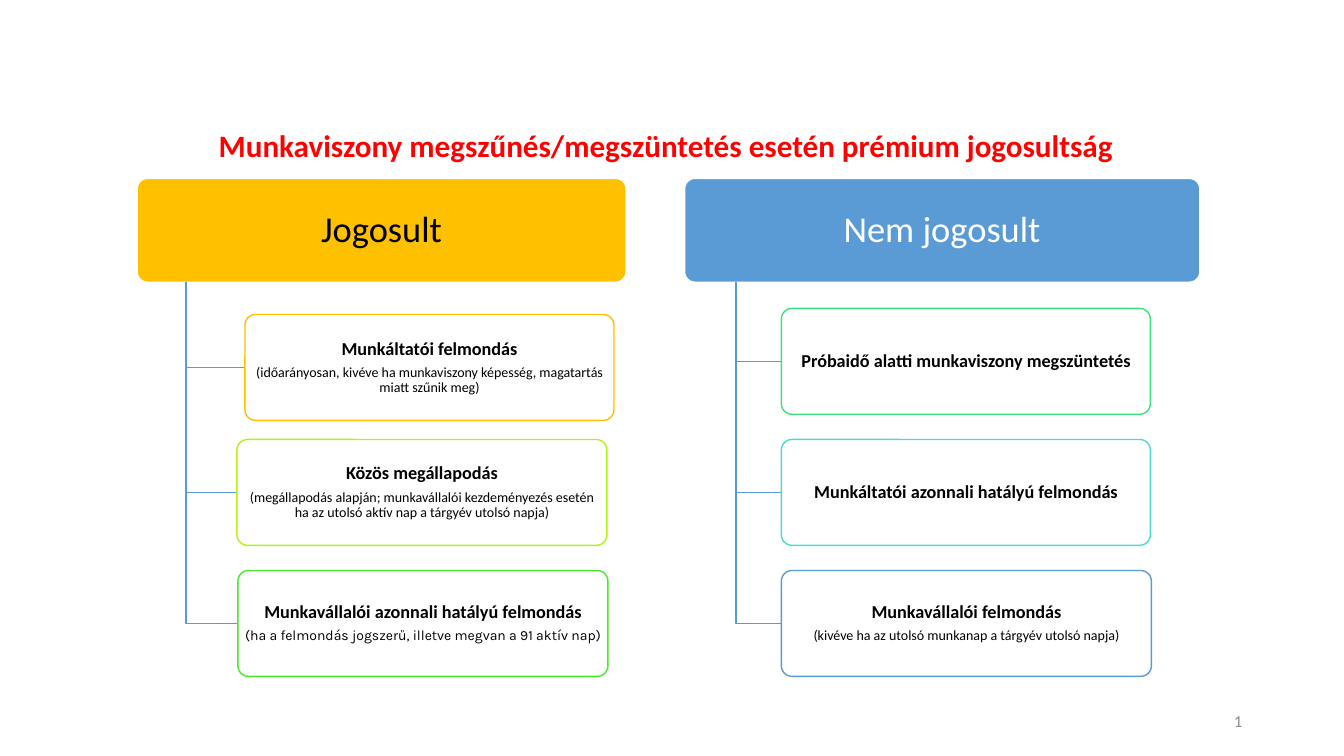
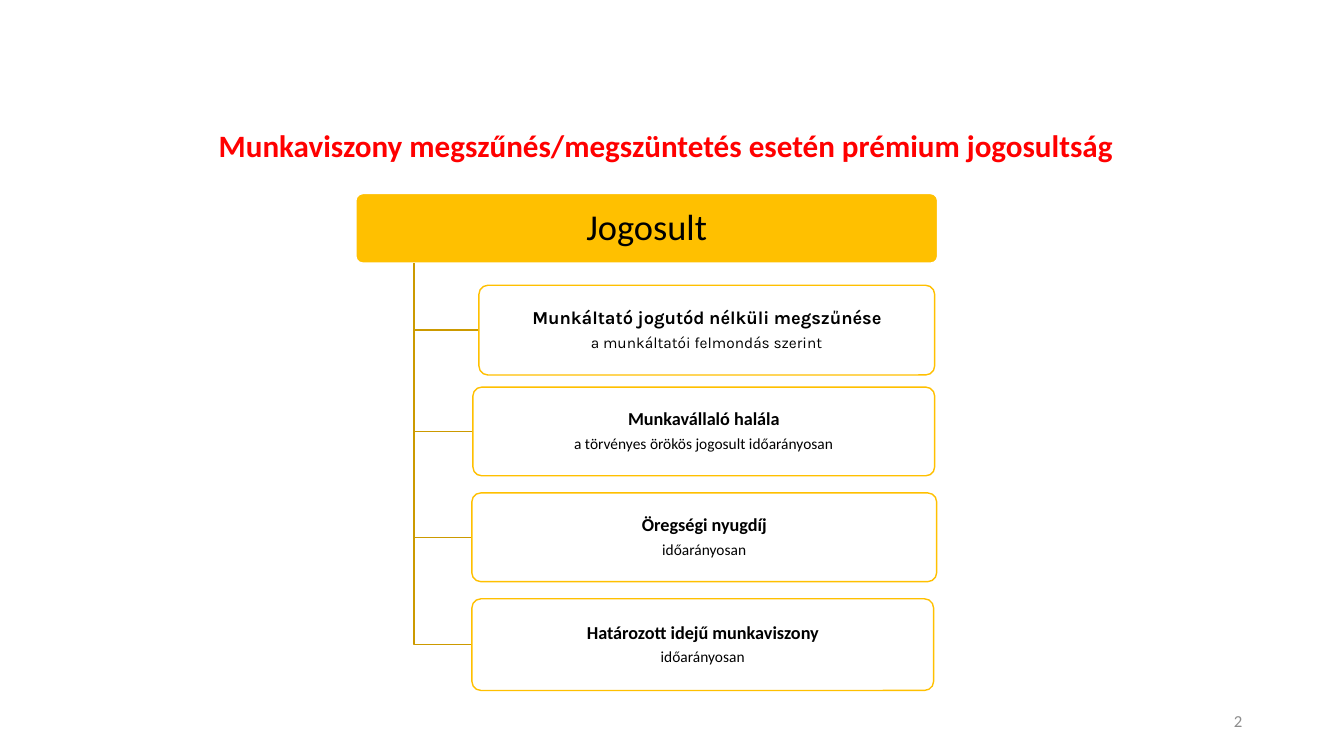
from dataclasses import dataclass

from lxml import etree
from pptx import Presentation
from pptx.dml import color
from pptx.enum import shapes, text
from pptx.oxml import ns
from pptx.util import Inches, Pt


@dataclass(frozen=True)
class Theme:
    font: str = "Calibri"
    accent_font: str = "Karla"
    title: str = "FF0000"
    number: str = "8C8C8C"
    ink: str = "000000"
    paper: str = "FFFFFF"
    gold: str = "FFC000"
    dark_gold: str = "CC9A00"
    blue: str = "5B9BD5"
    lime: str = "B2F514"
    green: str = "46EC27"
    mint: str = "39E37B"
    aqua: str = "4ADCD2"
    title_size: float = 22.2
    header_size: float = 26
    item_size: float = 13
    number_size: float = 12
    line_width: float = 1
    corner: float = 0.1
    trunk: float = 0.1  # trunk position as a share of the header width
    item_opacity: int = 90


T = Theme()


@dataclass
class Item:
    """A branch box, with its place given from the tree's top left corner."""
    dx: float
    dy: float
    w: float
    h: float
    border: str
    head: str
    note: str = ""
    head_font: str = T.font
    note_font: str = T.font


@dataclass
class Tree:
    box: tuple  # header box: left, top, width, height
    header: str
    fill: str
    ink: str
    line: str
    note_size: float
    items: list


def rgb(value):
    return color.RGBColor.from_string(value)


def write(p, words, size, ink, font=T.font, bold=False):
    p.text = words
    for r in p.runs:
        r.font.name, r.font.size, r.font.bold = font, Pt(size), bold
        r.font.color.rgb = rgb(ink)


def set_frame(tf, anchor, inset_x=0.1, inset_y=0.05):
    tf.word_wrap = True
    tf.vertical_anchor = anchor
    tf.margin_left = tf.margin_right = Inches(inset_x)
    tf.margin_top = tf.margin_bottom = Inches(inset_y)


def add_label(slide, box, words, size, ink, align, anchor, bold=False):
    sp = slide.shapes.add_textbox(*map(Inches, box))
    set_frame(sp.text_frame, anchor)
    p = sp.text_frame.paragraphs[0]
    p.alignment = align
    write(p, words, size, ink, bold=bold)
    return p


def add_box(slide, box, fill, border, lines, inset):
    """Rounded box; each line is (words, size, ink, font, bold)."""
    sp = slide.shapes.add_shape(shapes.MSO_SHAPE.ROUNDED_RECTANGLE, *map(Inches, box))
    sp.adjustments[0] = T.corner
    sp.shadow.inherit = False
    sp.fill.solid()
    sp.fill.fore_color.rgb = rgb(fill)
    sp.line.color.rgb = rgb(border)
    sp.line.width = Pt(T.line_width)
    tf = sp.text_frame
    set_frame(tf, text.MSO_ANCHOR.MIDDLE, *inset)
    for i, line in enumerate(lines):
        p = tf.add_paragraph() if i else tf.paragraphs[0]
        p.alignment = text.PP_ALIGN.CENTER
        p.line_spacing = 0.9
        p.space_after = Pt(round(0.35 * line[1], 1))
        write(p, *line)
    return sp


def set_opacity(sp, percent):
    fill = sp.fill._xPr.find(ns.qn("a:solidFill"))
    etree.SubElement(fill[0], ns.qn("a:alpha"), val=str(percent * 1000))


def add_elbow(slide, start, end, line):
    """Line that runs down from start, then right to end."""
    (x1, y1), (x2, y2) = [tuple(map(Inches, point)) for point in (start, end)]
    builder = slide.shapes.build_freeform(x1, y1)
    builder.add_line_segments([(x1, y2), (x2, y2)], close=False)
    sp = builder.convert_to_shape()
    sp.shadow.inherit = False
    sp.fill.background()
    sp.line.color.rgb = rgb(line)
    sp.line.width = Pt(T.line_width)


def add_tree(slide, tree):
    x, y, w, h = tree.box
    # Header
    header = (tree.header, T.header_size, tree.ink)
    add_box(slide, tree.box, tree.fill, T.paper, [header], (0.05, 0.04))
    # Branches
    for item in tree.items:
        left, top = x + item.dx, y + item.dy
        add_elbow(slide, (x + T.trunk * w, y + h), (left, top + item.h / 2), tree.line)
        lines = [(item.head, T.item_size, T.ink, item.head_font, True)]
        if item.note:
            lines.append((item.note, tree.note_size, T.ink, item.note_font))
        sp = add_box(slide, (left, top, item.w, item.h), T.paper, item.border,
                     lines, (0.03, 0.02))
        set_opacity(sp, T.item_opacity)


def add_slide(prs, number, trees):
    slide = prs.slides.add_slide(prs.slide_layouts[6])
    # Slide number
    add_label(slide, (9.42, 6.95, 3, 0.4), str(number), T.number_size, T.number,
              text.PP_ALIGN.RIGHT, text.MSO_ANCHOR.MIDDLE)
    # Title
    p = add_label(slide, (0.55, 1.09, 12.11, 0.59),
                  "Munkaviszony megszűnés/megszüntetés esetén prémium jogosultság",
                  T.title_size, T.title, text.PP_ALIGN.CENTER, text.MSO_ANCHOR.TOP, True)
    p.line_spacing = 1.3
    for tree in trees:
        add_tree(slide, tree)


ENTITLED = Tree((1.36, 1.77, 4.85, 1.03), "Jogosult", T.gold, T.ink, T.blue, 10, [
    Item(1.07, 1.35, 3.66, 1.05, T.gold, "Munkáltatói felmondás",
         "(időarányosan, kivéve ha munkaviszony képesség, magatartás miatt szűnik meg)"),
    Item(0.99, 2.59, 3.67, 1.05, T.lime, "Közös megállapodás",
         "(megállapodás alapján; munkavállalói kezdeményezés esetén "
         "ha az utolsó aktív nap a tárgyév utolsó napja)"),
    Item(1, 3.89, 3.67, 1.05, T.green, "Munkavállalói azonnali hatályú felmondás",
         "(ha a felmondás jogszerű, illetve megvan a 91 aktív nap)",
         note_font=T.accent_font),
])

NOT_ENTITLED = Tree((6.79, 1.77, 5.11, 1.03), "Nem jogosult", T.blue, T.paper, T.blue, 10, [
    Item(0.96, 1.29, 3.66, 1.05, T.mint, "Próbaidő alatti munkaviszony megszüntetés"),
    Item(0.96, 2.59, 3.66, 1.05, T.aqua, "Munkáltatói azonnali hatályú felmondás"),
    Item(0.96, 3.89, 3.67, 1.05, T.blue, "Munkavállalói felmondás",
         "(kivéve ha az utolsó munkanap a tárgyév utolsó napja)"),
])

OTHER_ENTITLED = Tree((3.53, 1.92, 5.77, 0.69), "Jogosult", T.gold, T.ink, T.dark_gold, 11, [
    Item(1.22, 0.91, 4.52, 0.89, T.gold, "Munkáltató jogutód nélküli megszűnése",
         "a munkáltatói felmondás szerint", T.accent_font, T.accent_font),
    Item(1.16, 1.92, 4.58, 0.88, T.gold, "Munkavállaló halála",
         "a törvényes örökös jogosult időarányosan"),
    Item(1.15, 2.97, 4.61, 0.88, T.gold, "Öregségi nyugdíj", "időarányosan"),
    Item(1.15, 4.02, 4.58, 0.91, T.gold, "Határozott idejű munkaviszony", "időarányosan"),
])


def main():
    prs = Presentation()
    prs.slide_width, prs.slide_height = Inches(13.33), Inches(7.5)
    for number, trees in enumerate([[ENTITLED, NOT_ENTITLED], [OTHER_ENTITLED]], 1):
        add_slide(prs, number, trees)
    prs.save("out.pptx")


if __name__ == "__main__":
    main()
